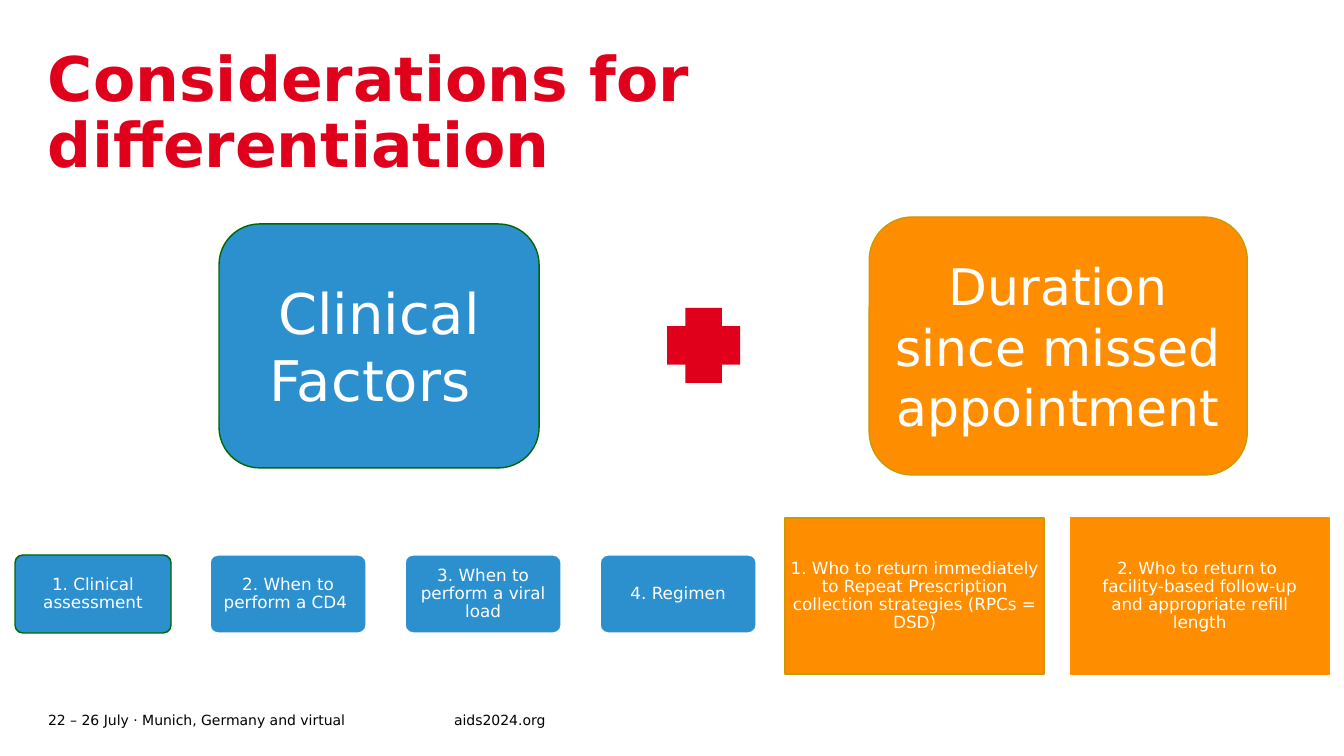
from pptx import Presentation
from pptx import util as u
from pptx.dml.color import RGBColor
from pptx.enum import shapes, text

PX = 914400 / 100.8
RED, BLUE, ORANGE, WHITE = "E0001B", "2C90CF", "FF8D00", "FFFFFF"
GREEN, GOLD = "006600", "CC9900"
ROUND, RECT = shapes.MSO_SHAPE.ROUNDED_RECTANGLE, shapes.MSO_SHAPE.RECTANGLE


def rgb(value):
    return RGBColor.from_string(value)


def add_box(at, words="", size=12, color=WHITE, kind=None, fill=None, line=None,
            inset=(0, 0), spacing=None):
    at = [round(v * PX) for v in at]
    if kind is None:
        sp = s.shapes.add_textbox(*at)
    else:
        sp = s.shapes.add_shape(kind, *at)
        sp.shadow.inherit = False
        sp.fill.solid()
        sp.fill.fore_color.rgb = rgb(fill)
        if line:
            sp.line.color.rgb = rgb(line)
            sp.line.width = u.Pt(1)
        else:
            sp.line.fill.background()
    tf = sp.text_frame
    tf.word_wrap = True
    tf.vertical_anchor = text.MSO_ANCHOR.MIDDLE
    tf.margin_left = tf.margin_right = round(inset[0] * PX)
    tf.margin_top = tf.margin_bottom = round(inset[1] * PX)
    if words:
        tf.text = words
        for p in tf.paragraphs:
            p.alignment = text.PP_ALIGN.CENTER if kind else text.PP_ALIGN.LEFT
            p.line_spacing = spacing
            p.font.name = "DejaVu Sans"
            p.font.size = u.Pt(size)
            p.font.color.rgb = rgb(color)
    return sp


prs = Presentation()
prs.slide_width, prs.slide_height = u.Inches(13.33), u.Inches(7.5)
s = prs.slides.add_slide(prs.slide_layouts[6])

add_box((48, 708, 405, 24), "22 – 26 July · Munich, Germany and virtual", 10, "000000")
add_box((454, 708, 195, 24), "aids2024.org", 10, "000000")

title = add_box((48, 48, 980, 135), "Considerations for differentiation", 44, RED,
                spacing=0.9)
title.text_frame.vertical_anchor = text.MSO_ANCHOR.TOP
title.text_frame.paragraphs[0].font.bold = True

add_box((219, 224, 320, 244), "Clinical Factors ", 40, kind=ROUND,
        fill=BLUE, line=GREEN, inset=(10, 5))
add_box((869, 217, 378, 258), "Duration since missed appointment", 36, kind=ROUND,
        fill=ORANGE, line=GOLD, inset=(10, 5))
add_box((667, 308, 73, 75), kind=shapes.MSO_SHAPE.CROSS, fill=RED)

durations = [
    ("1. Who to return immediately to Repeat Prescription collection strategies "
     "(RPCs = DSD)", GOLD, 5),
    ("2. Who to return to \nfacility-based follow-up and appropriate refill length",
     ORANGE, 14),
]
for i, (words, line, inset) in enumerate(durations):
    add_box((785 + 285 * i, 518, 259, 156), words, kind=RECT, fill=ORANGE,
            line=line, inset=(inset, inset), spacing=0.9)

factors = [
    ("1. Clinical assessment", GREEN),
    ("2. When to perform a CD4 ", WHITE),
    ("3. When to perform a viral load", WHITE),
    ("4. Regimen", WHITE),
]
for i, (words, line) in enumerate(factors):
    sp = add_box((15 + 195 * i, 555, 156, 78), words, kind=ROUND, fill=BLUE,
                 line=line, inset=(3, 2), spacing=0.9)
    sp.adjustments[0] = 0.1

prs.save("out.pptx")
